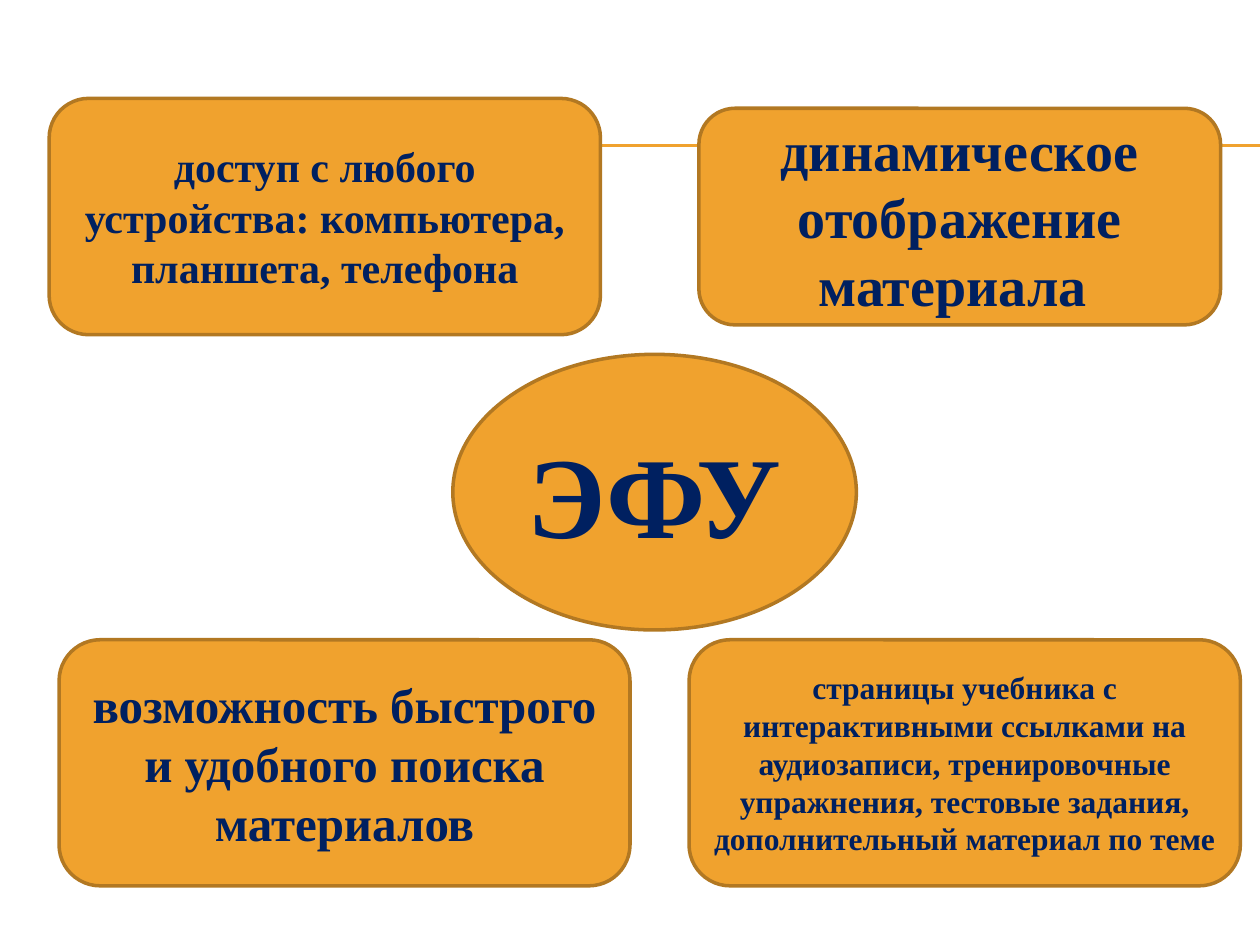
from dataclasses import dataclass

from lxml.etree import SubElement
from pptx import Presentation
from pptx.dml.color import RGBColor as RGB
from pptx.enum.shapes import MSO_CONNECTOR as Connector, MSO_SHAPE as Shape
from pptx.enum.text import MSO_ANCHOR as Anchor, PP_ALIGN as Align
from pptx.oxml.ns import qn
from pptx.util import Pt


@dataclass(frozen=True)
class Theme:
    font: str = "Times New Roman"
    fill: RGB = RGB(0xF0, 0xA2, 0x2E)
    outline: RGB = RGB(0xB2, 0x78, 0x22)
    text: RGB = RGB(0x00, 0x20, 0x60)
    rule_width: float = 0.75
    outline_width: float = 2
    hub_size: float = 66
    large: float = 32
    medium: float = 28
    normal: float = 24
    small: float = 18


class SlideBuilder:
    def __init__(self, slide, theme):
        self.slide = slide
        self.theme = theme

    def rule(self, left, right, y):
        s = self.slide.shapes.add_connector(
            Connector.STRAIGHT, Pt(left), Pt(y), Pt(right), Pt(y))
        s.line.color.rgb = self.theme.fill
        s.line.width = Pt(self.theme.rule_width)
        SubElement(s._element.spPr, qn("a:effectLst"))

    def bubble(self, kind, box, text, size):
        t = self.theme
        s = self.slide.shapes.add_shape(kind, *map(Pt, box))
        s.shadow.inherit = False
        s.fill.solid()
        s.fill.fore_color.rgb = t.fill
        s.line.color.rgb = t.outline
        s.line.width = Pt(t.outline_width)
        tf = s.text_frame
        tf.word_wrap = True
        tf.vertical_anchor = Anchor.MIDDLE
        p = tf.paragraphs[0]
        p.alignment = Align.CENTER
        r = p.add_run()
        r.text = text
        r.font.name = t.font
        r.font.size = Pt(size)
        r.font.bold = True
        r.font.color.rgb = t.text


def main():
    prs = Presentation()
    prs.slide_width, prs.slide_height = Pt(720), Pt(540)
    theme = Theme()
    sb = SlideBuilder(prs.slides.add_slide(prs.slide_layouts[6]), theme)

    # Double rule behind the upper cards
    for y in (82.8, 83.5):
        sb.rule(40.3, 720, y)

    # Central topic
    sb.bubble(Shape.OVAL, (258.75, 202.5, 230.6, 157.5), "ЭФУ", theme.hub_size)

    # Feature cards around the topic
    cards = [
        ((399.4, 61.9, 298.1, 123.75),
         "динамическое отображение материала ", theme.large),
        ((33.75, 365.6, 326.25, 140.6),
         "возможность быстрого и удобного поиска материалов", theme.medium),
        ((28.1, 56.25, 315, 135),
         "доступ с любого устройства: компьютера, планшета, телефона",
         theme.normal),
        ((393.75, 365.6, 315, 140.6),
         "страницы учебника с интерактивными ссылками на аудиозаписи, "
         "тренировочные упражнения, тестовые задания, "
         "дополнительный материал по теме", theme.small),
    ]
    for box, text, size in cards:
        sb.bubble(Shape.ROUNDED_RECTANGLE, box, text, size)

    prs.save("out.pptx")


if __name__ == "__main__":
    main()
